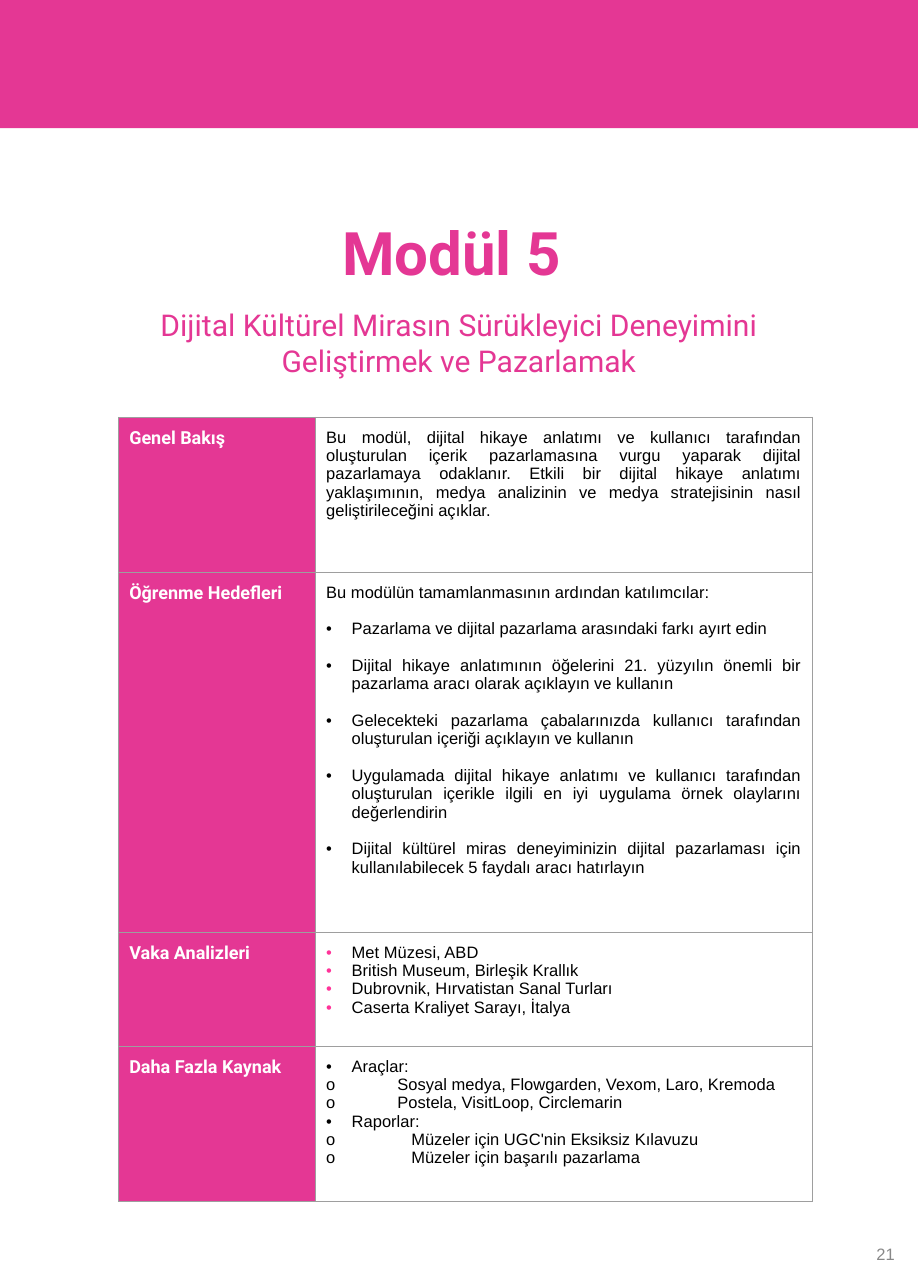
from pptx import Presentation
from pptx.dml.color import RGBColor
from pptx.enum.shapes import MSO_SHAPE
from pptx.enum.text import MSO_ANCHOR, PP_ALIGN
from pptx.util import Pt
from lxml.etree import SubElement
from pptx.oxml.ns import qn

COLORS = {"pink": "E43794", "dot": "FF3399", "white": "FFFFFF",
          "black": "000000", "gray": "888888", "rule": "9E9E9E"}

# Text boxes: text, (left, top, width, height), font, size, color, bold, align, anchor, line spacing
BOXES = [
    ("Modül 5 ", (79.2, 143.4, 453.6, 55.4), "Roboto", 40, "pink", True,
     PP_ALIGN.CENTER, MSO_ANCHOR.MIDDLE, 0.9),
    ("Dijital Kültürel Mirasın Sürükleyici Deneyimini Geliştirmek ve Pazarlamak",
     (79.2, 200.9, 453.6, 49.7), "Roboto", 20, "pink", False,
     PP_ALIGN.CENTER, MSO_ANCHOR.TOP, 1.0),
    ("21", (387.6, 822, 216, 28.8), "Arial", 11, "gray", False,
     PP_ALIGN.RIGHT, MSO_ANCHOR.MIDDLE, 1.0),
]

# Bullet styles: sign, color, indent
STYLES = {"plain": None, "goal": ("•", "black", 17), "case": ("•", "dot", 17),
          "tool": ("o", "black", 47.5), "report": ("o", "black", 56.7)}

# Table rows: label, height, justified, gap between paragraphs, [(style, text)]
ROWS = [
    ("Genel Bakış", 103.3, True, 0, [
        ("plain", "Bu modül, dijital hikaye anlatımı ve kullanıcı tarafından oluşturulan "
                  "içerik pazarlamasına vurgu yaparak dijital pazarlamaya odaklanır. Etkili "
                  "bir dijital hikaye anlatımı yaklaşımının, medya analizinin ve medya "
                  "stratejisinin nasıl geliştirileceğini açıklar."),
    ]),
    ("Öğrenme Hedefleri", 240.2, True, 12.2, [
        ("plain", "Bu modülün tamamlanmasının ardından katılımcılar:"),
        ("goal", "Pazarlama ve dijital pazarlama arasındaki farkı ayırt edin"),
        ("goal", "Dijital hikaye anlatımının öğelerini 21. yüzyılın önemli bir "
                 "pazarlama aracı olarak açıklayın ve kullanın"),
        ("goal", "Gelecekteki pazarlama çabalarınızda kullanıcı tarafından "
                 "oluşturulan içeriği açıklayın ve kullanın"),
        ("goal", "Uygulamada dijital hikaye anlatımı ve kullanıcı tarafından oluşturulan "
                 "içerikle ilgili en iyi uygulama örnek olaylarını değerlendirin"),
        ("goal", "Dijital kültürel miras deneyiminizin dijital pazarlaması için "
                 "kullanılabilecek 5 faydalı aracı hatırlayın"),
    ]),
    ("Vaka Analizleri", 76, False, 0, [
        ("case", "Met Müzesi, ABD"),
        ("case", "British Museum, Birleşik Krallık"),
        ("case", "Dubrovnik, Hırvatistan Sanal Turları"),
        ("case", "Caserta Kraliyet Sarayı, İtalya"),
    ]),
    ("Daha Fazla Kaynak", 103.3, False, 0, [
        ("goal", "Araçlar:"),
        ("tool", "Sosyal medya, Flowgarden, Vexom, Laro, Kremoda"),
        ("tool", "Postela, VisitLoop, Circlemarin"),
        ("goal", "Raporlar:"),
        ("report", "Müzeler için UGC'nin Eksiksiz Kılavuzu"),
        ("report", "Müzeler için başarılı pazarlama"),
    ]),
]
COLS = (131.3, 331.2)
LEFT, TOP = 79.0, 278.4


def color(name):
    return RGBColor.from_string(COLORS[name])


def paint(shape, name):
    shape.fill.solid()
    shape.fill.fore_color.rgb = color(name)


def style(para, face, size, name, bold=False):
    for run in para.runs:
        font = run.font
        font.name, font.size, font.bold = face, Pt(size), bold
        font.color.rgb = color(name)


def bullet(para, sign, name, indent):
    props = para._p.get_or_add_pPr()
    props.set("marL", str(Pt(indent)))
    props.set("indent", str(-Pt(indent)))
    SubElement(SubElement(props, qn("a:buClr")), qn("a:srgbClr"), val=COLORS[name])
    SubElement(props, qn("a:buFont"), typeface="Arial")
    SubElement(props, qn("a:buChar"), char=sign)


def dress(cell, fill):
    props = cell._tc.get_or_add_tcPr()
    for side in ("a:lnL", "a:lnR", "a:lnT", "a:lnB"):
        line = SubElement(props, qn(side), w=str(Pt(0.75)))
        SubElement(SubElement(line, qn("a:solidFill")), qn("a:srgbClr"), val=COLORS["rule"])
    paint(cell, fill)
    cell.margin_left = cell.margin_right = Pt(7.2)
    cell.margin_top = cell.margin_bottom = Pt(7.2)


def main():
    deck = Presentation()
    deck.slide_width, deck.slide_height = Pt(612), Pt(859)
    slide = deck.slides.add_slide(deck.slide_layouts[6])

    # Top band
    band = slide.shapes.add_shape(MSO_SHAPE.RECTANGLE, 0, 0, deck.slide_width, Pt(85.5))
    band.shadow.inherit = False
    paint(band, "pink")
    band.line.fill.background()

    # Title, subtitle and page number
    for text, place, face, size, name, bold, align, anchor, space in BOXES:
        frame = slide.shapes.add_textbox(*map(Pt, place)).text_frame
        frame.word_wrap, frame.vertical_anchor = True, anchor
        frame.text = text
        para = frame.paragraphs[0]
        para.alignment, para.line_spacing = align, space
        style(para, face, size, name, bold)

    # Module table
    high = sum(row[1] for row in ROWS)
    table = slide.shapes.add_table(len(ROWS), len(COLS), Pt(LEFT), Pt(TOP),
                                   Pt(sum(COLS)), Pt(high)).table
    table.first_row = table.horz_banding = False
    for col, wide in zip(table.columns, COLS):
        col.width = Pt(wide)
    for row, (label, tall, full, gap, items) in zip(table.rows, ROWS):
        row.height = Pt(tall)
        head, body = row.cells
        dress(head, "pink")
        dress(body, "white")
        head.text_frame.text = label
        style(head.text_frame.paragraphs[0], "Roboto", 12, "white", True)
        body.text_frame.text = "\n".join(text for _, text in items)
        for i, (para, (kind, _)) in enumerate(zip(body.text_frame.paragraphs, items)):
            para.alignment = PP_ALIGN.JUSTIFY if full else PP_ALIGN.LEFT
            if i and gap:
                para.space_before = Pt(gap)
            if STYLES[kind]:
                bullet(para, *STYLES[kind])
            style(para, "Arial", 11, "black")

    deck.save("out.pptx")


if __name__ == "__main__":
    main()
